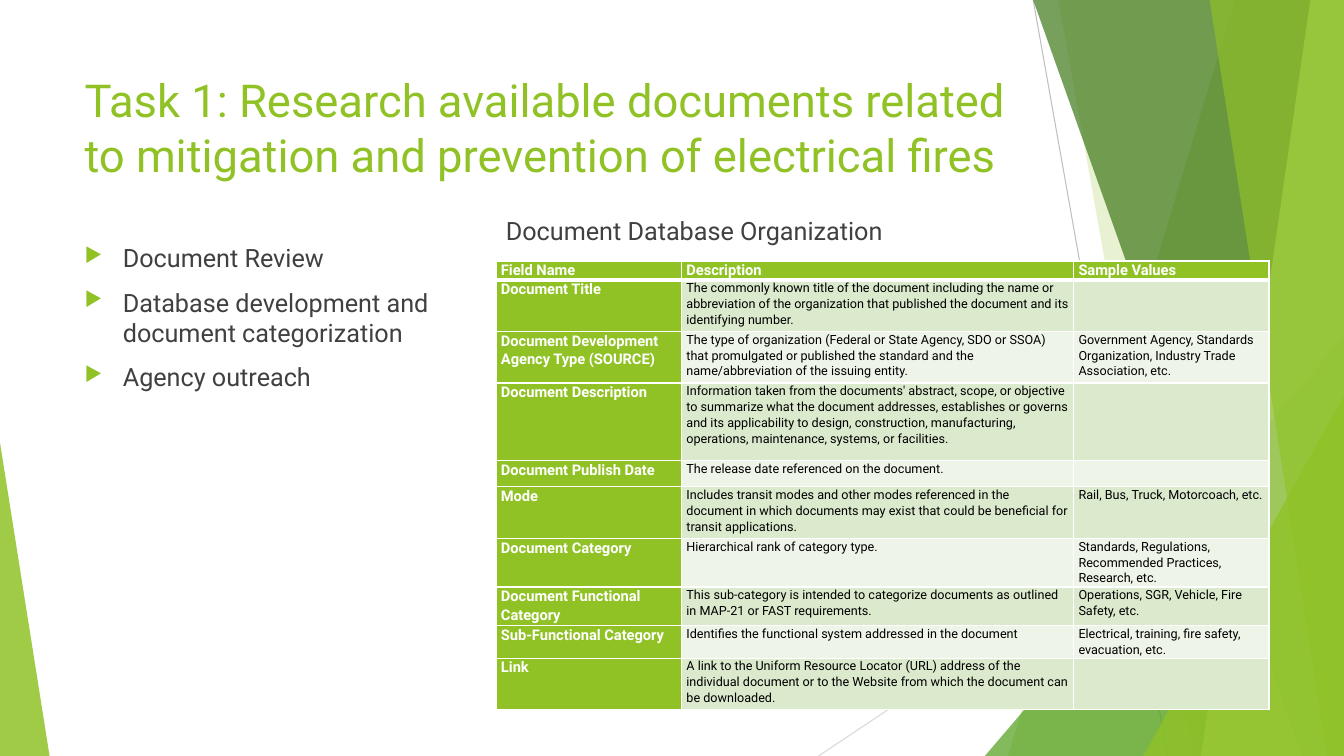
"""Build the Task 1 slide: document review bullets beside the database organization table."""
import pptx
import pptx.util
import pptx.dml.color
import pptx.enum.shapes
import pptx.oxml.ns
import lxml.etree

THEME = {
    "font": "Roboto", "green": "90C226", "leaf": "54A021", "forest": "3F7819", "lime": "C0E474",
    "gray": "404040", "black": "000000", "white": "FFFFFF", "bands": ("DBE9CD", "EEF4E8"),
    "title": 32.4, "body": 18, "label": 10.5, "detail": 9,
}
COLUMNS, ROWS = 160, 90
CELL = pptx.util.Inches(1 / 12)


def add_xml(parent, tag, **attributes):
    """Append a drawing element with the given attributes."""
    return lxml.etree.SubElement(parent, pptx.oxml.ns.qn(tag), {k: str(v) for k, v in attributes.items()})


def write(para, text, size, color, bold=False):
    """Add a formatted span of text to a paragraph."""
    span = para.add_run()
    span.text = text
    for name, value in {"name": THEME["font"], "size": pptx.util.Pt(size), "bold": bold}.items():
        setattr(span.font, name, value)
    span.font.color.rgb = pptx.dml.color.RGBColor.from_string(color)


deck = pptx.Presentation()
deck.slide_width, deck.slide_height = COLUMNS * CELL, ROWS * CELL
page = deck.slides.add_slide(deck.slide_layouts[6])

for start_x, start_y, end_x, end_y, color in [
    (123, 0, 139, 90, "BFBFBF"),
    (160, 48.36, 97.44, 90, "D9D9D9"),
]:
    ends = [int(value * CELL) for value in (start_x, start_y, end_x, end_y)]
    line = page.shapes.add_connector(pptx.enum.shapes.MSO_CONNECTOR.STRAIGHT, *ends)
    line.line.color.rgb = pptx.dml.color.RGBColor.from_string(color)
    line.line.width = pptx.util.Pt(0.75)
    add_xml(line._element.spPr, "a:effectLst")

# panel: top-left and bottom-left column; wedge: left, width, top, apex
facets = [
    ("panel", (147.36, 120.48), "green", 30),
    ("panel", (126, 141.96), "green", 20),
    ("wedge", (117.24, 42.76, 40, 1), "leaf", 72),
    ("panel", (122.52, 154.92), "forest", 70),
    ("panel", (156.36, 143.04), "lime", 70),
    ("panel", (143.52, 158.16), "green", 65),
    ("wedge", (136.1, 23.9, 47.16, 1), "green", 80),
    ("wedge", (0, 5.9, 52.7, 0), "green", 85),
]
for kind, place, color, opacity in facets:
    if kind == "panel":
        top_x, bottom_x = place
        outline = page.shapes.build_freeform(top_x, 0, scale=CELL)
        outline.add_line_segments([(COLUMNS, 0), (COLUMNS, ROWS), (bottom_x, ROWS)], close=True)
        facet = outline.convert_to_shape()
    else:
        left, width, top, apex = place
        frame = [int(value * CELL) for value in (left, top, width, ROWS - top)]
        facet = page.shapes.add_shape(pptx.enum.shapes.MSO_SHAPE.ISOSCELES_TRIANGLE, *frame)
        facet.adjustments[0] = apex
    facet.shadow.inherit = False
    facet.line.fill.background()
    facet.fill.solid()
    facet.fill.fore_color.rgb = pptx.dml.color.RGBColor.from_string(THEME[color])
    tint = facet._element.spPr.find(".//" + pptx.oxml.ns.qn("a:srgbClr"))
    add_xml(tint, "a:alpha", val=opacity * 1000)

texts = [
    ((8.88, 8.04, 116.52, 17.28), "title", "green", False,
     ["Task 1: Research available documents related to mitigation and prevention of electrical fires"]),
    ((8.88, 28.32, 51.48, 50.88), "body", "gray", True,
     ["Document Review", "Database development and document categorization", "Agency outreach"]),
    ((59.04, 25.08, 56.52, 8.04), "body", "gray", False, ["Document Database Organization"]),
]
for place, size, color, bulleted, lines in texts:
    box = page.shapes.add_textbox(*[int(value * CELL) for value in place])
    box.text_frame.word_wrap = True
    for index, text in enumerate(lines):
        para = box.text_frame.add_paragraph() if index else box.text_frame.paragraphs[0]
        write(para, text, THEME[size], THEME[color])
        if bulleted:
            para.space_before = pptx.util.Pt(10)
            props = para._p.get_or_add_pPr()
            indent = pptx.util.Inches(0.38)
            props.set("marL", str(indent))
            props.set("indent", str(-indent))
            add_xml(add_xml(props, "a:buClr"), "a:srgbClr", val=THEME["green"])
            add_xml(props, "a:buSzPct", val=80000)
            add_xml(props, "a:buChar", char="▶")

records = [
    (1.44, "Field Name", "Description", "Sample Values"),
    (6.14, "Document Title", "The commonly known title of the document including the name or abbreviation of "
     "the organization that published the document and its identifying number.", ""),
    (6.14, "Document Development Agency Type (SOURCE)", "The type of organization (Federal or State Agency, "
     "SDO or SSOA) that promulgated or published the standard and the name/abbreviation of the issuing entity.",
     "Government Agency, Standards Organization, Industry Trade Association, etc."),
    (9.26, "Document Description", "Information taken from the documents' abstract, scope, or objective to "
     "summarize what the document addresses, establishes or governs and its applicability to design, "
     "construction, manufacturing, operations, maintenance, systems, or facilities.", ""),
    (3.1, "Document Publish Date", "The release date referenced on the document.", ""),
    (6.14, "Mode", "Includes transit modes and other modes referenced in the document in which documents may "
     "exist that could be beneficial for transit applications.", "Rail, Bus, Truck, Motorcoach, etc."),
    (4.6, "Document Category", "Hierarchical rank of category type.",
     "Standards, Regulations, Recommended Practices, Research, etc."),
    (4.6, "Document Functional Category", "This sub-category is intended to categorize documents as outlined "
     "in MAP-21 or FAST requirements.", "Operations, SGR, Vehicle, Fire Safety, etc."),
    (3.2, "Sub-Functional Category", "Identifies the functional system addressed in the document",
     "Electrical, training, fire safety, evacuation, etc."),
    (6.14, "Link", "A link to the Uniform Resource Locator (URL) address of the individual document or to the "
     "Website from which the document can be downloaded.", ""),
]
widths = (22.08, 46.68, 23.28)
heights = [record[0] for record in records]
frame = [int(value * CELL) for value in (59.04, 31.08, sum(widths), sum(heights))]
table = page.shapes.add_table(len(records), len(widths), *frame).table
table.horz_banding = False
for column, width in zip(table.columns, widths):
    column.width = int(width * CELL)

for row, (height, *values) in enumerate(records):
    table.rows[row].height = int(height * CELL)
    for column, text in enumerate(values):
        cell = table.cell(row, column)
        side = pptx.util.Inches(0.05)
        for name, value in {"left": side, "right": side, "top": 0, "bottom": 0}.items():
            setattr(cell, "margin_" + name, value)
        label = row == 0 or column == 0
        para = cell.text_frame.paragraphs[0]
        para.line_spacing, para.space_after = 1.07, pptx.util.Pt(8)
        if text:
            size, color = (THEME["label"], THEME["white"]) if label else (THEME["detail"], THEME["black"])
            write(para, text, size, color, label)
        else:
            add_xml(para._p, "a:endParaRPr", sz=THEME["detail"] * 100)
        props = cell._tc.get_or_add_tcPr()
        for edge in "LRTB":
            heavy = (row, edge) in [(0, "B"), (1, "T")]
            border = add_xml(props, "a:ln" + edge, w=pptx.util.Pt(3 if heavy else 1))
            add_xml(add_xml(border, "a:solidFill"), "a:srgbClr", val=THEME["white"])
        cell.fill.solid()
        fill = THEME["green"] if label else THEME["bands"][(row - 1) % 2]
        cell.fill.fore_color.rgb = pptx.dml.color.RGBColor.from_string(fill)

deck.save("out.pptx")
